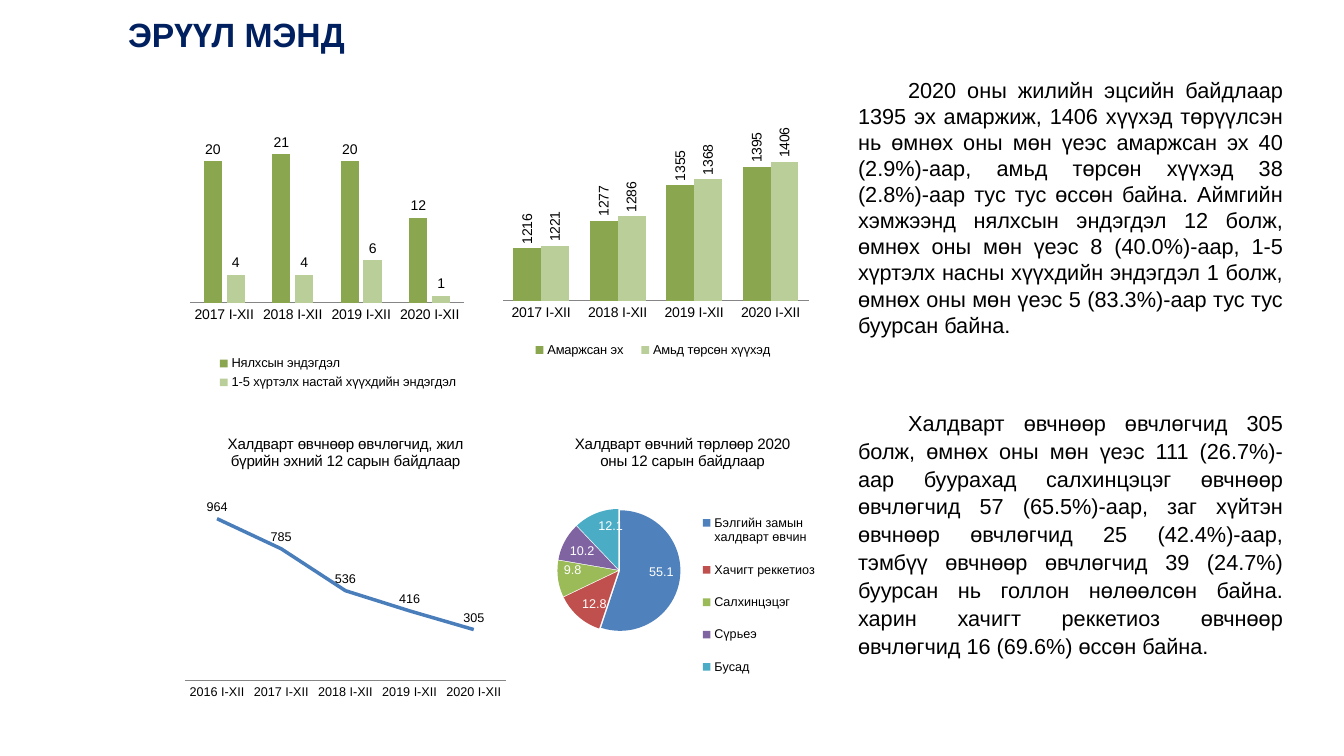
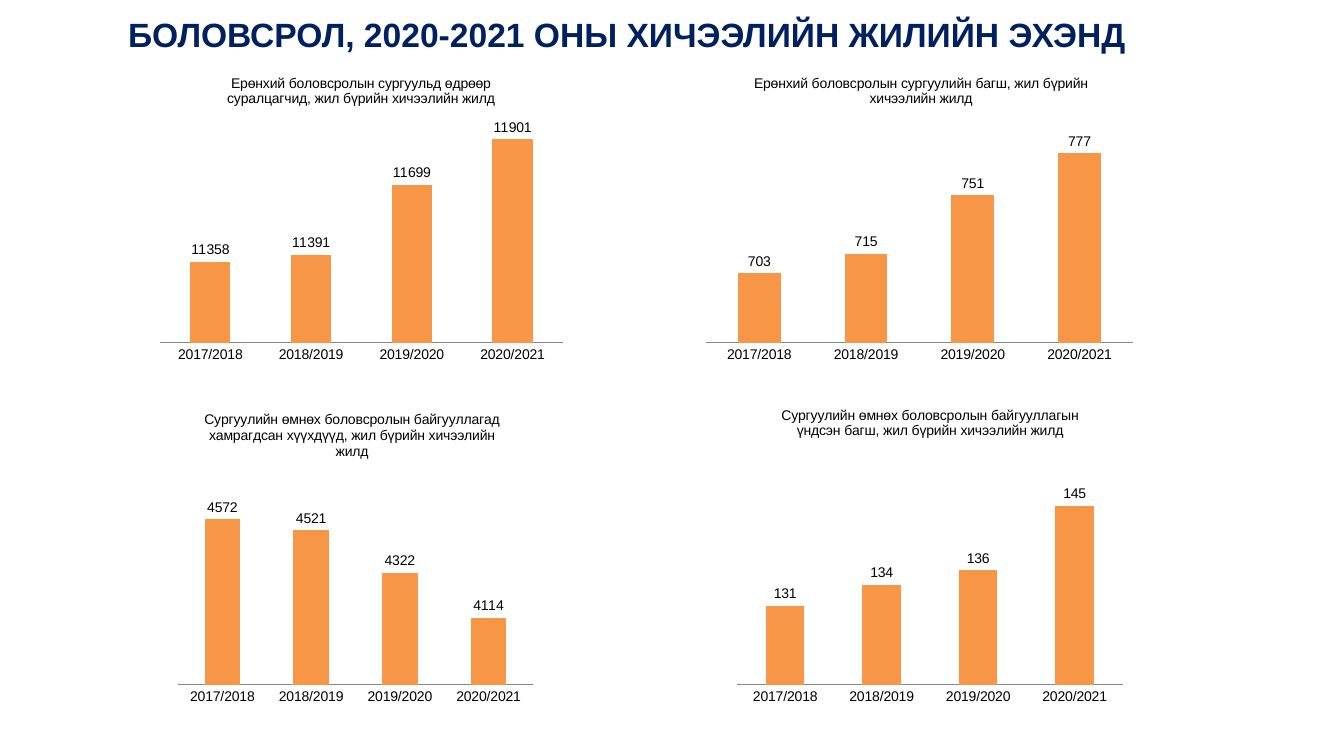
"""Build two slides of health and education statistics."""
from dataclasses import dataclass
from typing import NamedTuple, Optional

from lxml.etree import SubElement
from pptx import Presentation
from pptx.chart.chart import Chart
from pptx.chart.data import CategoryChartData
from pptx.dml.color import RGBColor
from pptx.enum.chart import (
    XL_CHART_TYPE,
    XL_LABEL_POSITION,
    XL_LEGEND_POSITION,
    XL_MARKER_STYLE,
    XL_TICK_MARK,
)
from pptx.enum.text import MSO_ANCHOR, MSO_AUTO_SIZE, PP_ALIGN
from pptx.oxml import parse_xml
from pptx.oxml.ns import nsdecls, qn
from pptx.slide import Slide
from pptx.util import Emu, Pt


@dataclass(frozen=True)
class Theme:
    """Colours and type sizes shared by the deck."""

    font: str = "Arial"
    heading: str = "002060"
    text: str = "000000"
    reverse: str = "FFFFFF"
    axis: str = "868686"
    greens: tuple[str, ...] = ("8AA64F", "B9CE98")
    orange: tuple[str, ...] = ("F79646",)
    blue: tuple[str, ...] = ("4A7EBB",)
    slices: tuple[str, ...] = ("4F81BD", "C0504D", "9BBB59", "8064A2", "4BACC6")
    heading_size: float = 24
    body_size: float = 15.5
    chart_size: float = 10
    small_size: float = 9
    legend_size: float = 9.2
    caption_size: float = 10.8


THEME = Theme()
EMU_PER_PX = 914400 / 100.8


class Area(NamedTuple):
    """A rectangle in px."""

    left: int
    top: int
    width: int
    height: int


@dataclass(frozen=True)
class Panel:
    """One chart with its place, data and look."""

    kind: XL_CHART_TYPE
    area: Area
    plot: Area
    categories: tuple[str, ...]
    series: dict[str, tuple[float, ...]]
    colours: tuple[str, ...]
    low: int = 0
    high: int = 0
    title: str = ""
    title_size: float = THEME.chart_size
    size: float = THEME.chart_size
    gap: int = 150
    overlap: int = -25
    legend: Optional[Area] = None
    legend_size: float = THEME.legend_size
    label_turn: int = 0


COLUMN = XL_CHART_TYPE.COLUMN_CLUSTERED
LINE = XL_CHART_TYPE.LINE
PIE = XL_CHART_TYPE.PIE
LABEL_PLACES = {
    COLUMN: XL_LABEL_POSITION.OUTSIDE_END,
    LINE: XL_LABEL_POSITION.ABOVE,
    PIE: XL_LABEL_POSITION.INSIDE_END,
}
TITLE_AREA = Area(118, 9, 1134, 50)
PERIODS = tuple(f"{year} I-XII" for year in range(2016, 2021))
SCHOOL_YEARS = tuple(f"{year}/{year + 1}" for year in range(2017, 2021))


def captioned(kind: XL_CHART_TYPE, title: str, values: tuple[float, ...], **look) -> Panel:
    """Make a panel whose only series is named by its title."""
    return Panel(kind, title=title, series={title.replace("\n", " "): values}, **look)


def school(title: str, values: tuple[float, ...], **look) -> Panel:
    """Make an orange column panel over the school years."""
    return captioned(COLUMN, title, values, categories=SCHOOL_YEARS, colours=THEME.orange, **look)


HEALTH_PANELS = (
    Panel(
        COLUMN, Area(184, 126, 302, 285), Area(190, 126, 274, 177), PERIODS[1:],
        {
            "Нялхсын эндэгдэл": (20, 21, 20, 12),
            "1-5 хүртэлх настай хүүхдийн эндэгдэл": (4, 4, 6, 1),
        },
        THEME.greens, high=25, legend=Area(214, 352, 248, 42),
    ),
    Panel(
        COLUMN, Area(494, 122, 320, 269), Area(503, 142, 306, 159), PERIODS[1:],
        {
            "Амаржсан эх": (1216, 1277, 1355, 1395),
            "Амьд төрсөн хүүхэд": (1221, 1286, 1368, 1406),
        },
        THEME.greens, low=1100, high=1450, gap=75, overlap=0,
        legend=Area(522, 339, 262, 22), label_turn=-90,
    ),
    captioned(
        LINE, "Халдварт өвчнөөр өвчлөгчид, жил\nбүрийн эхний 12 сарын байдлаар",
        (964, 785, 536, 416, 305), area=Area(178, 420, 335, 285),
        plot=Area(185, 479, 321, 202), categories=PERIODS, colours=THEME.blue,
        high=1200, size=THEME.small_size, title_size=THEME.caption_size,
    ),
    captioned(
        PIE, "Халдварт өвчний төрлөөр 2020\nоны 12 сарын байдлаар",
        (55.1, 12.8, 9.8, 10.2, 12.1), area=Area(534, 420, 297, 285),
        plot=Area(557, 509, 124, 123),
        categories=("Бэлгийн замын халдварт өвчин", "Хачигт реккетиоз", "Салхинцэцэг",
                    "Сүрьеэ", "Бусад"),
        colours=THEME.slices, size=THEME.small_size, title_size=THEME.caption_size,
        legend=Area(694, 498, 130, 194), legend_size=THEME.small_size,
    ),
)
EDUCATION_PANELS = (
    school(
        "Ерөнхий боловсролын сургуульд өдрөөр\nсуралцагчид, жил бүрийн хичээлийн жилд",
        (11358, 11391, 11699, 11901), area=Area(151, 59, 420, 310),
        plot=Area(160, 117, 403, 226), low=11000, high=12000,
    ),
    school(
        "Ерөнхий боловсролын сургуулийн багш, жил бүрийн\nхичээлийн жилд",
        (703, 715, 751, 777), area=Area(698, 59, 446, 310),
        plot=Area(706, 116, 427, 227), low=660, high=800,
    ),
    school(
        "Сургуулийн өмнөх боловсролын байгууллагад\n"
        "хамрагдсан хүүхдүүд, жил бүрийн хичээлийн\nжилд",
        (4572, 4521, 4322, 4114), area=Area(159, 395, 386, 328),
        plot=Area(178, 492, 355, 193), low=3800, high=4700,
    ),
    school(
        "Сургуулийн өмнөх боловсролын байгууллагын\nүндсэн багш, жил бүрийн хичээлийн жилд",
        (131, 134, 136, 145), area=Area(720, 390, 420, 355),
        plot=Area(737, 470, 386, 215), low=120, high=150,
    ),
)
BIRTHS = (
    "2020 оны жилийн эцсийн байдлаар 1395 эх амаржиж, 1406 хүүхэд төрүүлсэн нь өмнөх оны "
    "мөн үеэс амаржсан эх 40 (2.9%)-аар, амьд төрсөн хүүхэд 38 (2.8%)-аар тус тус өссөн "
    "байна. Аймгийн хэмжээнд нялхсын эндэгдэл 12 болж, өмнөх оны мөн үеэс 8 (40.0%)-аар, "
    "1-5 хүртэлх насны хүүхдийн эндэгдэл 1 болж, өмнөх оны мөн үеэс 5 (83.3%)-аар тус тус "
    "буурсан байна."
)
INFECTIONS = (
    "Халдварт өвчнөөр өвчлөгчид 305 болж, өмнөх оны мөн үеэс 111 (26.7%)-аар буурахад "
    "салхинцэцэг өвчнөөр өвчлөгчид 57 (65.5%)-аар, заг хүйтэн өвчнөөр өвчлөгчид 25 "
    "(42.4%)-аар, тэмбүү өвчнөөр өвчлөгчид 39 (24.7%) буурсан нь голлон нөлөөлсөн байна. "
    "харин хачигт реккетиоз өвчнөөр өвчлөгчид 16 (69.6%) өссөн байна."
)


def emu(px: int) -> Emu:
    """Turn px into EMU."""
    return Emu(round(px * EMU_PER_PX))


def style_font(font, size: float, colour: str = THEME.text, bold: bool = False) -> None:
    """Give a font the deck's face with a size and colour."""
    font.name, font.size, font.bold = THEME.font, Pt(size), bold
    font.color.rgb = RGBColor.from_string(colour)


def write_text(frame, text: str, *, size: float, colour: str = THEME.text,
               bold: bool = False, align: Optional[PP_ALIGN] = None,
               indent: Optional[int] = None, spacing: Optional[float] = None,
               after: float = 0) -> None:
    """Write each line of text as a formatted paragraph."""
    for number, line in enumerate(text.split("\n")):
        para = frame.add_paragraph() if number else frame.paragraphs[0]
        if indent is not None:
            properties = para._p.get_or_add_pPr()
            properties.set("marL", "0")
            properties.set("indent", str(emu(indent)))
            SubElement(properties, qn("a:buNone"))
        para.alignment = align
        para.line_spacing = spacing
        para.space_before, para.space_after = Pt(0), Pt(after)
        span = para.add_run()
        span.text = line
        style_font(span.font, size, colour, bold)


def fill_placeholder(box, area: Area, text: str, anchor: MSO_ANCHOR, **text_format) -> None:
    """Move a placeholder and write its text."""
    box.left, box.top, box.width, box.height = map(emu, area)
    frame = box.text_frame
    frame.auto_size, frame.word_wrap = MSO_AUTO_SIZE.NONE, True
    frame.vertical_anchor = anchor
    write_text(frame, text, **text_format)


def manual_layout(inner: Area, outer: Area, target: str = ""):
    """Make a chart layout element from two px rectangles."""
    fractions = {
        "x": (inner.left - outer.left) / outer.width,
        "y": (inner.top - outer.top) / outer.height,
        "w": inner.width / outer.width,
        "h": inner.height / outer.height,
    }
    layout = parse_xml(f"<c:layout {nsdecls('c')}><c:manualLayout/></c:layout>")
    settings = ({"layoutTarget": target} if target else {}) | {"xMode": "edge", "yMode": "edge"}
    for name, value in (settings | fractions).items():
        SubElement(layout[0], qn(f"c:{name}")).set("val", str(value))
    return layout


def drop_layout(parent) -> None:
    """Remove any automatic layout from a chart part."""
    for layout in parent.findall(qn("c:layout")):
        parent.remove(layout)


def style_axes(chart: Chart, panel: Panel) -> None:
    """Show a plain category axis and hide the value axis."""
    axis = chart.category_axis
    axis.major_tick_mark = axis.minor_tick_mark = XL_TICK_MARK.NONE
    axis.has_major_gridlines = False
    axis.format.line.color.rgb = RGBColor.from_string(THEME.axis)
    style_font(axis.tick_labels.font, panel.size)
    values = chart.value_axis
    values.has_major_gridlines = values.visible = False
    values.minimum_scale, values.maximum_scale = panel.low, panel.high


def style_series(chart: Chart, panel: Panel) -> None:
    """Colour the columns, line or slices."""
    plot = chart.plots[0]
    plot.vary_by_categories = panel.kind == PIE
    if panel.kind == PIE:
        pie = plot.series[0]
        explosion = parse_xml(f'<c:explosion {nsdecls("c")} val="2"/>')
        pie._element.get_or_add_spPr().addnext(explosion)
        parts = [pie.points[number] for number in range(len(panel.categories))]
    else:
        parts = list(plot.series)
    for part, colour in zip(parts, panel.colours):
        shade = RGBColor.from_string(colour)
        if panel.kind == LINE:
            part.smooth = False
            part.marker.style = XL_MARKER_STYLE.NONE
            part.format.line.width = Pt(2.5)
            part.format.line.color.rgb = shade
        else:
            part.format.fill.solid()
            part.format.fill.fore_color.rgb = shade
    if panel.kind == COLUMN:
        plot.gap_width, plot.overlap = panel.gap, panel.overlap


def style_labels(chart: Chart, panel: Panel) -> None:
    """Show the value of every point."""
    plot = chart.plots[0]
    plot.has_data_labels = True
    labels = plot.data_labels
    labels.number_format = "0.0" if panel.kind == PIE else "General"
    labels.number_format_is_linked = False
    style_font(labels.font, panel.size, THEME.reverse if panel.kind == PIE else THEME.text)
    labels.position = LABEL_PLACES[panel.kind]
    labels.show_value = True
    labels.show_percentage = False
    if panel.label_turn:
        body = labels._element.find(f".//{qn('a:bodyPr')}")
        body.set("rot", str(panel.label_turn * 60000))
        body.set("vert", "horz")


def style_legend(chart: Chart, panel: Panel) -> None:
    """Place the legend of a panel that has one."""
    chart.has_legend = panel.legend is not None
    if panel.legend is None:
        return
    legend = chart.legend
    legend.position = XL_LEGEND_POSITION.RIGHT if panel.kind == PIE else XL_LEGEND_POSITION.BOTTOM
    legend.include_in_layout = False
    style_font(legend.font, panel.legend_size)
    drop_layout(legend._element)
    position = legend._element.find(qn("c:legendPos"))
    position.addnext(manual_layout(panel.legend, panel.area))


def add_panel(page: Slide, panel: Panel) -> None:
    """Draw one chart panel."""
    data = CategoryChartData()
    data.categories = panel.categories
    for name, values in panel.series.items():
        data.add_series(name, values)
    chart = page.shapes.add_chart(panel.kind, *map(emu, panel.area), data).chart
    style_font(chart.font, panel.size)
    chart.has_title = bool(panel.title)
    if panel.title:
        write_text(chart.chart_title.text_frame, panel.title, size=panel.title_size)
        chart.chart_title.include_in_layout = False
    if panel.kind != PIE:
        style_axes(chart, panel)
    style_series(chart, panel)
    style_labels(chart, panel)
    style_legend(chart, panel)
    plot_area = chart._chartSpace.chart.plotArea
    drop_layout(plot_area)
    plot_area.insert(0, manual_layout(panel.plot, panel.area, "inner"))


def add_page(deck, layout: str, title: str, panels: tuple[Panel, ...]) -> Slide:
    """Add a titled slide with its charts."""
    page = deck.slides.add_slide(deck.slide_layouts.get_by_name(layout))
    fill_placeholder(page.shapes.title, TITLE_AREA, title, MSO_ANCHOR.MIDDLE,
                     size=THEME.heading_size, colour=THEME.heading, bold=True,
                     align=PP_ALIGN.LEFT)
    for panel in panels:
        add_panel(page, panel)
    return page


def main() -> None:
    """Build and save the deck."""
    deck = Presentation()
    deck.slide_width, deck.slide_height = emu(1344), emu(756)
    health = add_page(deck, "Two Content", "ЭРҮҮЛ МЭНД", HEALTH_PANELS)
    notes = ((1, 72, 273, BIRTHS, 1.0), (2, 403, 262, INFECTIONS, 1.07))
    for index, top, height, text, spacing in notes:
        fill_placeholder(health.placeholders[index], Area(848, top, 445, height), text,
                         MSO_ANCHOR.TOP, size=THEME.body_size, align=PP_ALIGN.JUSTIFY,
                         indent=50, spacing=spacing, after=6)
    add_page(deck, "Title Only", "БОЛОВСРОЛ, 2020-2021 ОНЫ ХИЧЭЭЛИЙН ЖИЛИЙН ЭХЭНД",
             EDUCATION_PANELS)
    deck.save("out.pptx")


if __name__ == "__main__":
    main()
